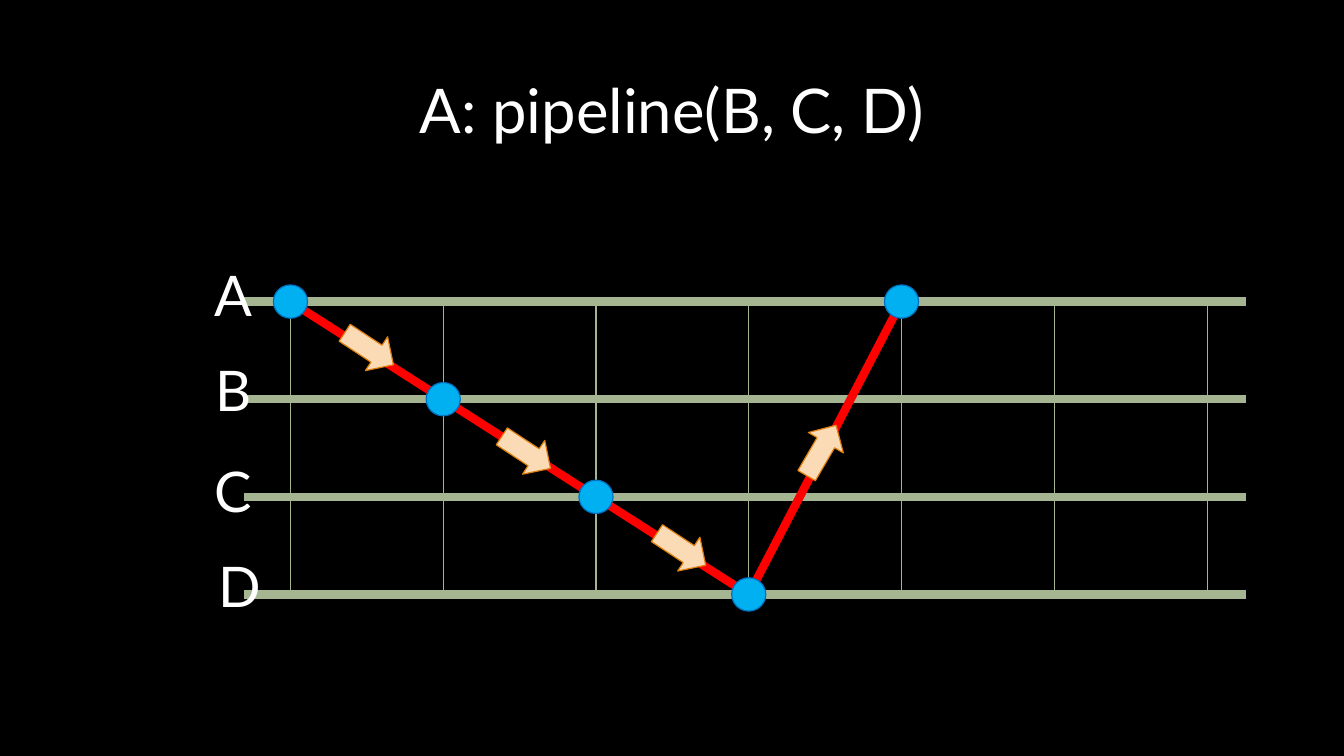
from dataclasses import dataclass
from itertools import pairwise

from lxml.etree import SubElement
from pptx import Presentation
from pptx.dml.color import RGBColor
from pptx.enum.shapes import MSO_CONNECTOR, MSO_SHAPE
from pptx.enum.text import MSO_ANCHOR, MSO_AUTO_SIZE, PP_ALIGN
from pptx.oxml.ns import qn
from pptx.util import Cm, Pt


@dataclass(frozen=True)
class Theme:
    font: str = "Lato"
    title_size: float = 44
    label_size: float = 40
    thin: float = 0.75
    thick: float = 6
    outline: float = 0.85
    background: str = "000000"
    text: str = "FFFFFF"
    grid: str = "A5B592"
    route: str = "FF0000"
    node_fill: str = "00B0F0"
    node_line: str = "0070C0"
    arrow_fill: str = "FADBB5"
    arrow_line: str = "DD7E0E"


THEME = Theme()
COLUMNS = [7.32 + 3.85 * index for index in range(7)]
ROWS = [7.6 + 2.46 * index for index in range(4)]
ROW_LEFT, ROW_RIGHT = 6.15, 31.4
LABELS = [("A", 5.38, 6.45), ("B", 5.38, 8.84), ("C", 5.38, 11.38), ("D", 5.51, 13.77)]
ROUTE = list(zip(COLUMNS, ROWS + ROWS[:1]))
ARROWS = [
    (9.3, 8.79, 33.3),
    (13.26, 11.4, 33.3),
    (17.17, 13.84, 33.3),
    (20.7, 11.35, 300.3),
]


def apply_format(target, values):
    for name, value in values.items():
        setattr(target, name, value)


def write_text(frame, text, size, frame_format, para_format):
    apply_format(frame, frame_format)
    para = frame.paragraphs[0]
    apply_format(para, {"alignment": PP_ALIGN.CENTER, **para_format})
    span = para.add_run()
    span.text = text
    apply_format(span.font, {"name": THEME.font, "size": Pt(size)})
    span.font.color.rgb = RGBColor.from_string(THEME.text)


def add_title(page, text):
    title = page.shapes.title
    place = {"left": Cm(2.33), "top": Cm(1.01), "width": Cm(29.21), "height": Cm(3.68)}
    apply_format(title, place)
    frame_format = {
        "word_wrap": True,
        "auto_size": MSO_AUTO_SIZE.NONE,
        "vertical_anchor": MSO_ANCHOR.MIDDLE,
    }
    write_text(title.text_frame, text, THEME.title_size, frame_format, {"line_spacing": 0.9})


def add_label(page, text, left, top):
    box = page.shapes.add_textbox(Cm(left), Cm(top), Cm(1.02), Cm(1.96))
    frame_format = {"margin_left": 0, "margin_right": 0, "word_wrap": False}
    write_text(box.text_frame, text, THEME.label_size, frame_format, {})


def add_line(page, start, end, color, weight):
    line = page.shapes.add_connector(
        MSO_CONNECTOR.STRAIGHT, *(Cm(value) for value in (*start, *end))
    )
    line.line.color.rgb = RGBColor.from_string(color)
    line.line.width = Pt(weight)
    SubElement(line._element.spPr, qn("a:effectLst"))


def add_marker(page, kind, center, size, fill, outline, rotation=0):
    (x, y), (width, height) = center, size
    marker = page.shapes.add_shape(
        kind, Cm(x - width / 2), Cm(y - height / 2), Cm(width), Cm(height)
    )
    marker.rotation = rotation
    marker.shadow.inherit = False
    marker.fill.solid()
    marker.fill.fore_color.rgb = RGBColor.from_string(fill)
    marker.line.color.rgb = RGBColor.from_string(outline)
    marker.line.width = Pt(THEME.outline)


def main():
    deck = Presentation()
    apply_format(deck, {"slide_width": Cm(33.87), "slide_height": Cm(19.05)})
    page = deck.slides.add_slide(deck.slide_layouts[5])
    page.background.fill.solid()
    page.background.fill.fore_color.rgb = RGBColor.from_string(THEME.background)

    for x in COLUMNS:
        add_line(page, (x, ROWS[0]), (x, ROWS[-1]), THEME.grid, THEME.thin)
    add_title(page, "A: pipeline(B, C, D)")
    for y in ROWS:
        add_line(page, (ROW_LEFT, y), (ROW_RIGHT, y), THEME.grid, THEME.thick)
    for label in LABELS:
        add_label(page, *label)
    for start, end in pairwise(ROUTE):
        add_line(page, start, end, THEME.route, THEME.thick)
    for center in ROUTE:
        add_marker(
            page, MSO_SHAPE.OVAL, center, (0.86, 0.84), THEME.node_fill, THEME.node_line
        )
    for x, y, rotation in ARROWS:
        add_marker(
            page, MSO_SHAPE.RIGHT_ARROW, (x, y), (1.47, 1.02),
            THEME.arrow_fill, THEME.arrow_line, rotation,
        )
    deck.save("out.pptx")


if __name__ == "__main__":
    main()
